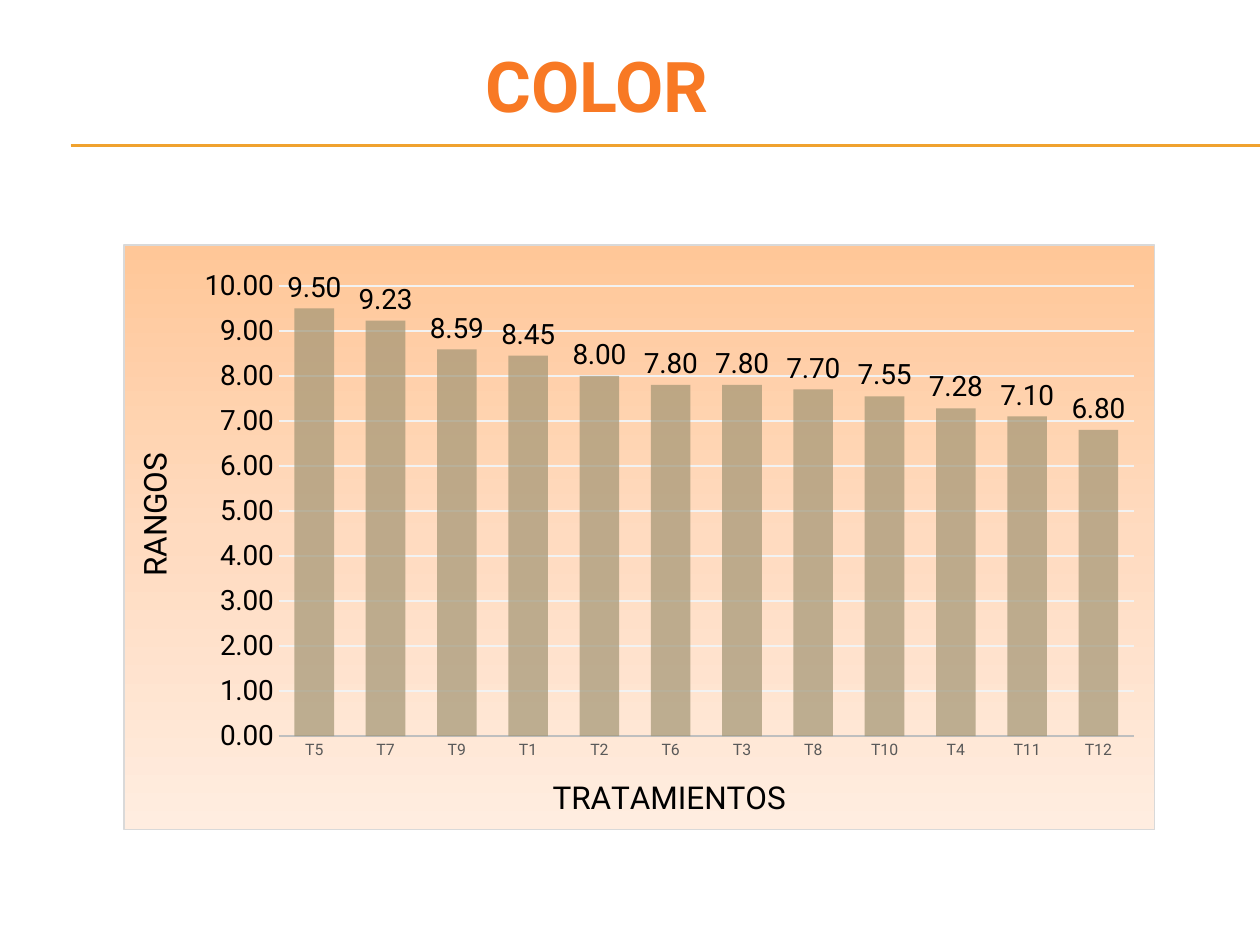
from lxml import etree
from pptx import Presentation
from pptx.chart.data import CategoryChartData
from pptx.dml.color import RGBColor
from pptx.enum.chart import XL_CHART_TYPE, XL_LABEL_POSITION, XL_TICK_MARK
from pptx.enum.shapes import MSO_CONNECTOR
from pptx.enum.text import MSO_AUTO_SIZE, PP_ALIGN
from pptx.oxml import parse_xml
from pptx.oxml.ns import qn
from pptx.util import Inches, Pt

COLUMN = XL_CHART_TYPE.COLUMN_CLUSTERED
OUTSIDE = XL_LABEL_POSITION.OUTSIDE_END
NO_TICK = XL_TICK_MARK.NONE
STRAIGHT = MSO_CONNECTOR.STRAIGHT
GROW = MSO_AUTO_SIZE.SHAPE_TO_FIT_TEXT
CENTER = PP_ALIGN.CENTER
ORANGE = RGBColor(0xF8, 0x79, 0x24)
GOLD = RGBColor(0xF0, 0xA2, 0x2E)
TAUPE = RGBColor(0xA1, 0x95, 0x74)
BLACK = RGBColor(0, 0, 0)
GRAY = RGBColor(0x59, 0x59, 0x59)
SILVER = RGBColor(0xBF, 0xBF, 0xBF)
PALE = RGBColor(0xF2, 0xF2, 0xF2)
EDGE = RGBColor(0xD9, 0xD9, 0xD9)
PEACH = [(0, RGBColor(0xFF, 0xC7, 0x98)), (50, RGBColor(0xFF, 0xDB, 0xC0)),
         (100, RGBColor(0xFF, 0xED, 0xE0))]
RANKS = {"T5": 9.5, "T7": 9.23, "T9": 8.59, "T1": 8.45, "T2": 8, "T6": 7.8,
         "T3": 7.8, "T8": 7.7, "T10": 7.55, "T4": 7.28, "T11": 7.1, "T12": 6.8}


def style(font, size, color, bold=False):
    for key, value in {"name": "Roboto", "size": Pt(size), "bold": bold}.items():
        setattr(font, key, value)
    font.color.rgb = color


def stroke(line, color, width):
    line.color.rgb = color
    line.width = Pt(width)


deck = Presentation()
deck.slide_width = Inches(10)
deck.slide_height = Inches(7.5)
slide = deck.slides.add_slide(deck.slide_layouts[6])

for top in (1.15, 1.16):
    rule = slide.shapes.add_connector(
        STRAIGHT, Inches(0.56), Inches(top), Inches(10), Inches(top))
    stroke(rule.line, GOLD, 0.75)
    etree.SubElement(rule.element.spPr, qn("a:effectLst"))

data = CategoryChartData(number_format="0.00")
data.categories = list(RANKS)
data.add_series("Series 1", list(RANKS.values()))
chart = slide.shapes.add_chart(
    COLUMN, Inches(0.98), Inches(1.94), Inches(8.19), Inches(4.65), data).chart
chart.has_legend = False
chart.has_title = False
style(chart.font, 10, BLACK)

plot = chart.plots[0]
for key, value in {"gap_width": 80, "overlap": 25, "vary_by_categories": False,
                   "has_data_labels": True}.items():
    setattr(plot, key, value)
labels = plot.data_labels
for key, value in {"show_value": True, "position": OUTSIDE, "number_format": "0.00",
                   "number_format_is_linked": False}.items():
    setattr(labels, key, value)
style(labels.font, 16, BLACK)

bars = plot.series[0].format
bars.fill.solid()
bars.fill.fore_color.rgb = TAUPE
bars.line.fill.background()
shade = chart.element.xpath(".//c:ser/c:spPr/a:solidFill/a:srgbClr")[0]
etree.SubElement(shade, qn("a:alpha"), val="70000")

ranks = chart.value_axis
for key, value in {"minimum_scale": 0, "maximum_scale": 10, "major_unit": 1,
                   "has_major_gridlines": True}.items():
    setattr(ranks, key, value)
ranks.tick_labels.number_format = "0.00"
ranks.tick_labels.number_format_is_linked = False
ranks.format.line.fill.background()
stroke(ranks.major_gridlines.format.line, PALE, 0.75)
stroke(chart.category_axis.format.line, SILVER, 1.25)

for axis, title, size, color in ((chart.category_axis, "TRATAMIENTOS", 9, GRAY),
                                 (ranks, "RANGOS", 16, BLACK)):
    axis.major_tick_mark = NO_TICK
    axis.minor_tick_mark = NO_TICK
    style(axis.tick_labels.font, size, color)
    frame = axis.axis_title.text_frame
    frame.text = title
    style(frame.paragraphs[0].runs[0].font, 18, BLACK)

SPACES = ('xmlns:c="http://schemas.openxmlformats.org/drawingml/2006/chart" '
          'xmlns:a="http://schemas.openxmlformats.org/drawingml/2006/main"')
stops = "".join(f'<a:gs pos="{spot * 1000}"><a:srgbClr val="{color}"/></a:gs>'
                for spot, color in PEACH)
panel = parse_xml(
    f'<c:spPr {SPACES}><a:gradFill><a:gsLst>{stops}</a:gsLst>'
    f'<a:lin ang="5400000" scaled="0"/></a:gradFill><a:ln w="{Pt(0.75)}">'
    f'<a:solidFill><a:srgbClr val="{EDGE}"/></a:solidFill></a:ln></c:spPr>')
chart.element.find(qn("c:chart")).addnext(panel)

area = chart.element.xpath("c:chart/c:plotArea")[0]
for old in area.findall(qn("c:layout")):
    area.remove(old)
layout = etree.Element(qn("c:layout"))
area.insert(0, layout)
manual = etree.SubElement(layout, qn("c:manualLayout"))
for key, value in {"layoutTarget": "inner", "xMode": "edge", "yMode": "edge",
                   "x": "0.15", "y": "0.07", "w": "0.83", "h": "0.77"}.items():
    etree.SubElement(manual, qn(f"c:{key}"), val=value)

box = slide.shapes.add_textbox(Inches(2.24), Inches(0.29), Inches(5), Inches(0.77))
head = box.text_frame
head.word_wrap = True
head.auto_size = GROW
head.text = "COLOR"
head.paragraphs[0].alignment = CENTER
style(head.paragraphs[0].runs[0].font, 40, ORANGE, True)

deck.save("out.pptx")
